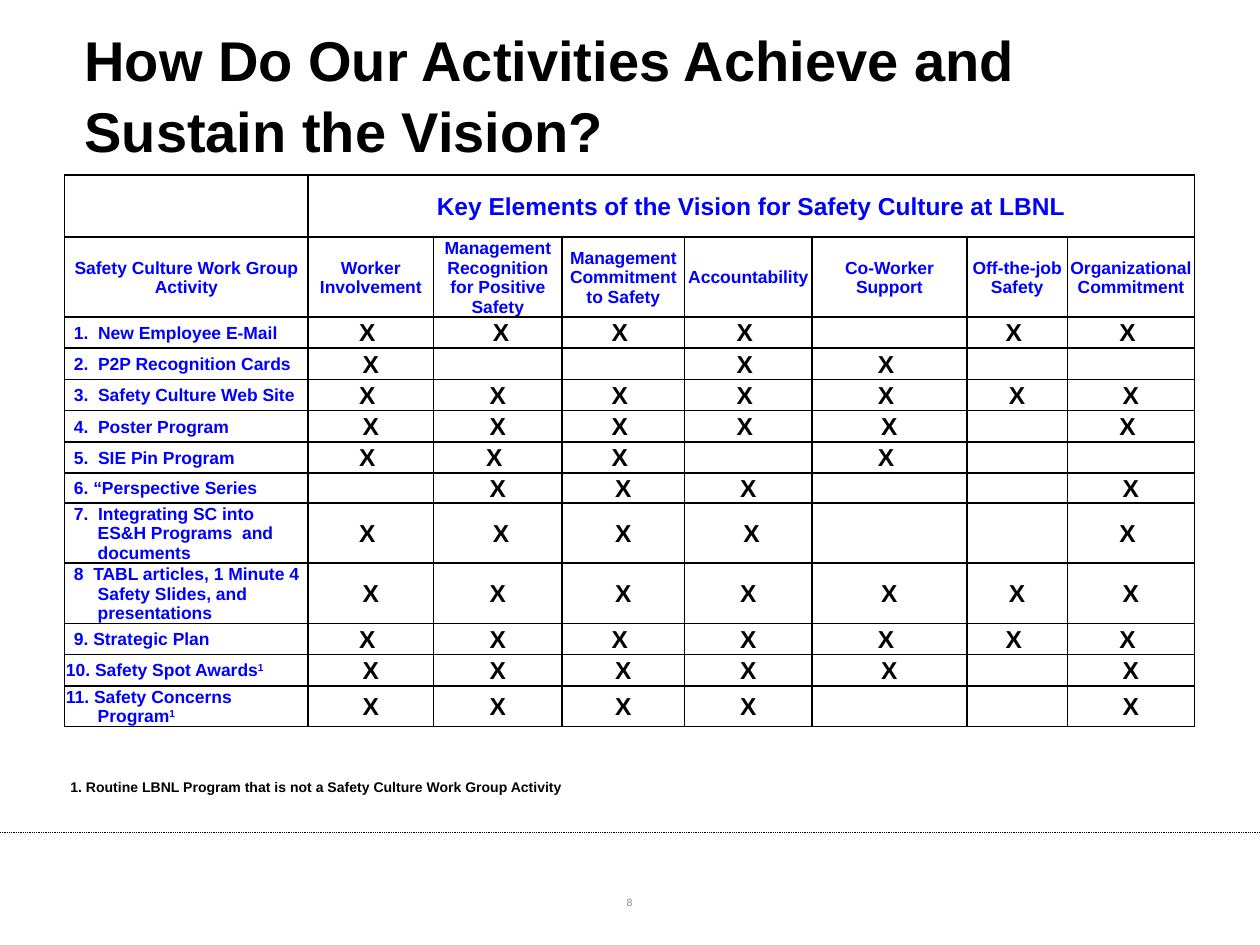
from lxml import etree
from pptx import Presentation
from pptx import util as u
from pptx.dml.color import RGBColor
from pptx.enum import dml, shapes, text
from pptx.oxml import ns

COLORS = {"ink": "000000", "label": "0000FF", "number": "898989"}
FONT = "Arial"
CENTER = text.PP_ALIGN.CENTER
LEFT = text.PP_ALIGN.LEFT

COLUMN_WIDTHS = [4.91, 2.53, 2.59, 2.47, 2.57, 3.12, 2.03, 2.56]
ROW_HEIGHTS = [1.25, 1.61] + [0.63] * 5 + [0.6, 1.21, 1.21, 0.63, 0.63, 0.81]
HEADINGS = [
    "Safety Culture Work Group Activity",
    "Worker Involvement",
    "Management Recognition for Positive Safety",
    "Management Commitment to Safety",
    "Accountability",
    "Co-Worker Support",
    "Off-the-job Safety",
    "Organizational Commitment",
]

# Label, superscript, left margin and first-line indent (cm), one mark per column
ACTIVITIES = [
    ("1.  New Employee E-Mail", "", 0.48, -0.32, "<><<-<<"),
    ("2.  P2P Recognition Cards", "", 0, 0.16, "x--<<--"),
    ("3.  Safety Culture Web Site", "", 0, 0.16, "<x<<<xx"),
    ("4.  Poster Program", "", 0, 0.16, "xx<<x-<"),
    ("5.  SIE Pin Program", "", 0, 0.16, "<<<-<--"),
    ("6. “Perspective Series", "", 0.48, -0.32, "-xxx--x"),
    ("7.  Integrating SC into ES&H Programs  and documents", "",
     0.64, -0.48, "<>x>--<"),
    ("8  TABL articles, 1 Minute 4 Safety Slides, and presentations", "",
     0.64, -0.48, "xxxxxxx"),
    ("9. Strategic Plan", "", 0, 0.16, "<x<x<<<"),
    ("10. Safety Spot Awards", "1", 0, 0, "xxxxx-x"),
    ("11. Safety Concerns Program", "1", 0.64, -0.64, "xxxx--x"),
]
# A space beside the mark nudges it off the cell's centre
MARKS = {"x": "X", "<": "X ", ">": " X", "-": ""}


def write(frame, words, size=10, color="label", bold=True, align=CENTER,
          superscript="", left=0, indent=0):
    """Fill the first paragraph of a text frame."""
    para = frame.paragraphs[0]
    para.alignment = align
    if left or indent:
        properties = para._p.get_or_add_pPr()
        properties.set("marL", str(u.Cm(left)))
        properties.set("indent", str(u.Cm(indent)))
    for part, baseline in ((words, 0), (superscript, 30000)):
        if not part:
            continue
        span = para.add_run()
        span.text = part
        span.font.name = FONT
        span.font.size = u.Pt(size)
        span.font.bold = bold
        span.font.color.rgb = RGBColor.from_string(COLORS[color])
        if baseline:
            span.font._element.set("baseline", str(baseline))
    if not words:
        # Keep empty cells from stretching their row
        etree.SubElement(para._p, ns.qn("a:endParaRPr"), sz=str(size * 100))
    return para


def add_borders(cell):
    properties = cell._tc.get_or_add_tcPr()
    for index, side in enumerate(("lnL", "lnR", "lnT", "lnB")):
        line = etree.Element(ns.qn(f"a:{side}"), w=str(u.Pt(1)))
        fill = etree.SubElement(line, ns.qn("a:solidFill"))
        etree.SubElement(fill, ns.qn("a:srgbClr"), val=COLORS["ink"])
        properties.insert(index, line)


def fill_cell(cell, words, **style):
    cell.margin_left = cell.margin_right = cell.margin_top = u.Cm(0.03)
    cell.margin_bottom = 0
    cell.vertical_anchor = text.MSO_ANCHOR.MIDDLE
    cell.fill.background()
    add_borders(cell)
    write(cell.text_frame, words, **style)


def add_title(page, words):
    title = page.shapes.title
    title.left, title.top = u.Cm(1.45), u.Cm(0.28)
    title.width, title.height = u.Cm(22.99), u.Cm(3.18)
    frame = title.text_frame
    frame.auto_size = text.MSO_AUTO_SIZE.NONE
    frame.vertical_anchor = text.MSO_ANCHOR.MIDDLE
    para = write(frame, words, size=32, color="ink", align=LEFT)
    para.line_spacing = 1.05


def add_matrix(page):
    table = page.shapes.add_table(
        len(ROW_HEIGHTS), len(COLUMN_WIDTHS), u.Cm(1.3), u.Cm(3.53),
        u.Cm(sum(COLUMN_WIDTHS)), u.Cm(sum(ROW_HEIGHTS))).table
    table.first_row = table.horz_banding = False
    for column, width in zip(table.columns, COLUMN_WIDTHS):
        column.width = u.Cm(width)
    for row, height in zip(table.rows, ROW_HEIGHTS):
        row.height = u.Cm(height)

    # Heading rows
    table.cell(0, 1).merge(table.cell(0, 7))
    banner = {1: "Key Elements of the Vision for Safety Culture at LBNL"}
    for index, heading in enumerate(HEADINGS):
        fill_cell(table.cell(0, index), banner.get(index, ""), size=14)
        fill_cell(table.cell(1, index), heading)

    # Activity rows
    for row, activity in enumerate(ACTIVITIES, start=2):
        label, superscript, left, indent, marks = activity
        fill_cell(table.cell(row, 0), label, align=LEFT,
                  superscript=superscript, left=left, indent=indent)
        for column, mark in enumerate(marks, start=1):
            fill_cell(table.cell(row, column), MARKS[mark],
                      size=10 if mark == "-" else 14, color="ink")


def add_text(page, words, left, top, width, height,
             anchor=text.MSO_ANCHOR.TOP, **style):
    box = page.shapes.add_textbox(u.Cm(left), u.Cm(top),
                                  u.Cm(width), u.Cm(height))
    box.text_frame.word_wrap = True
    box.text_frame.vertical_anchor = anchor
    write(box.text_frame, words, **style)


def add_dotted_rule(page, top, width):
    rule = page.shapes.add_connector(
        shapes.MSO_CONNECTOR.STRAIGHT, 0, u.Cm(top), width, u.Cm(top))
    rule.line.color.rgb = RGBColor.from_string(COLORS["ink"])
    rule.line.width = u.Pt(0.5)
    rule.line.dash_style = dml.MSO_LINE.ROUND_DOT
    etree.SubElement(rule._element.spPr, ns.qn("a:effectLst"))


def main():
    deck = Presentation()
    deck.slide_width, deck.slide_height = u.Cm(25.4), u.Cm(19.05)
    page = deck.slides.add_slide(deck.slide_layouts[5])

    add_dotted_rule(page, 16.79, deck.slide_width)
    add_title(page, "How Do Our Activities Achieve and Sustain the Vision?")
    add_matrix(page)

    # Footnote and page number
    add_text(page, "1. Routine LBNL Program that is not a Safety Culture "
             "Work Group Activity", 1.17, 15.57, 10.95, 0.61,
             size=8, color="ink", align=LEFT)
    add_text(page, "8", 9.73, 17.68, 5.92, 1.02, size=6, color="number",
             bold=False, anchor=text.MSO_ANCHOR.MIDDLE)

    deck.save("out.pptx")


if __name__ == "__main__":
    main()
